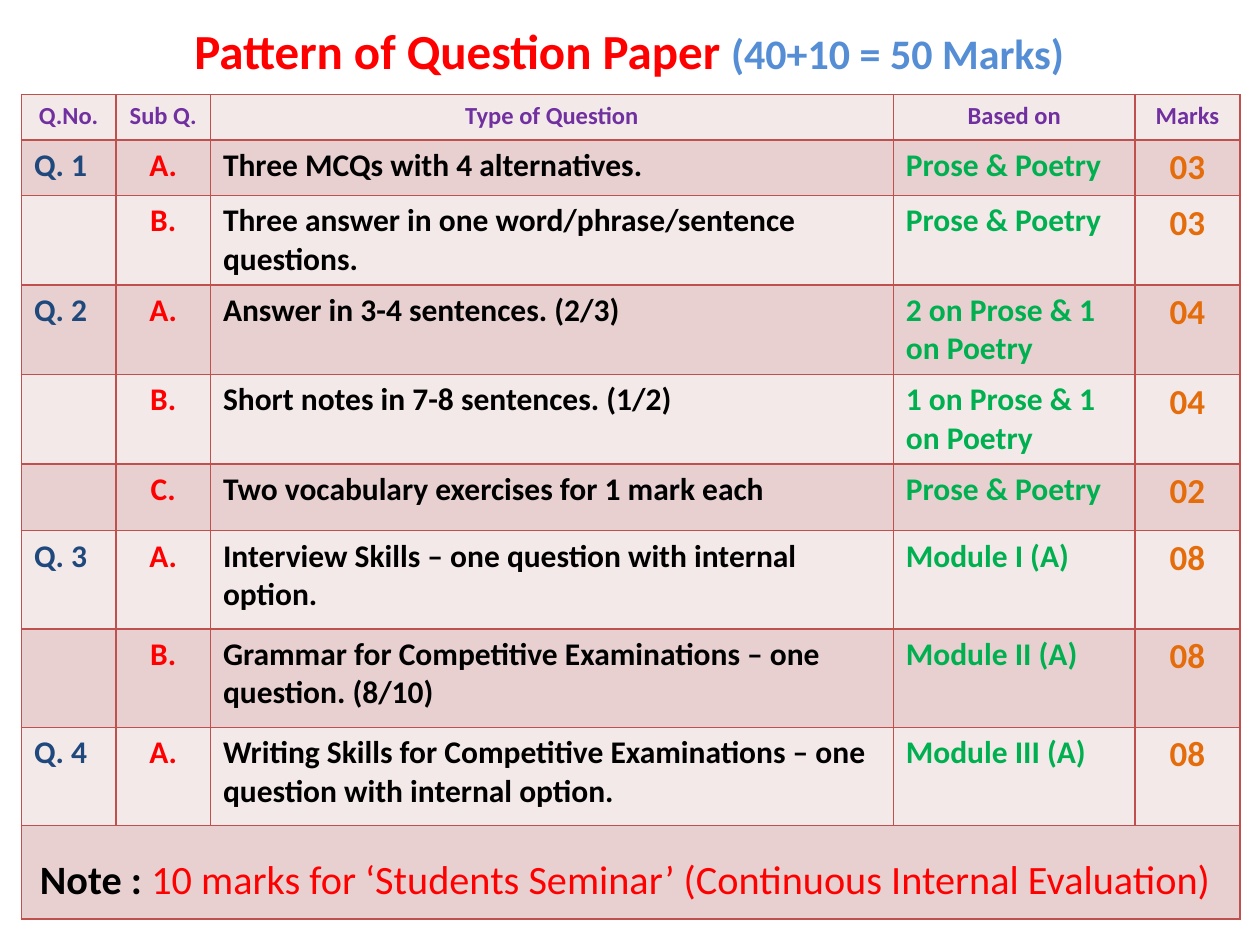
from dataclasses import dataclass

from lxml import etree
from pptx import Presentation
from pptx.dml.color import RGBColor
from pptx.enum.text import MSO_ANCHOR, MSO_AUTO_SIZE, PP_ALIGN
from pptx.oxml.ns import qn
from pptx.table import Table, _Cell
from pptx.text.text import _Paragraph
from pptx.util import Inches, Pt

CENTER = PP_ALIGN.CENTER
LEFT = PP_ALIGN.LEFT
TOP = MSO_ANCHOR.TOP
NO_AUTOFIT = MSO_AUTO_SIZE.NONE

RED = RGBColor(0xFF, 0x00, 0x00)
BLUE = RGBColor(0x55, 0x8E, 0xD5)
NAVY = RGBColor(0x1F, 0x49, 0x7D)
PURPLE = RGBColor(0x70, 0x30, 0xA0)
GREEN = RGBColor(0x00, 0xB0, 0x50)
ORANGE = RGBColor(0xE4, 0x6C, 0x0A)
BLACK = RGBColor(0x00, 0x00, 0x00)
LIGHT_BAND = RGBColor(0xF4, 0xE9, 0xE9)
DARK_BAND = RGBColor(0xE8, 0xD0, 0xD0)
BORDER = RGBColor(0xC0, 0x50, 0x4D)

FONT = "Calibri"


@dataclass(frozen=True)
class TextStyle:
    size: float
    color: RGBColor
    bold: bool = True


@dataclass(frozen=True)
class Column:
    heading: str
    width: float
    style: TextStyle
    alignment: PP_ALIGN


@dataclass(frozen=True)
class Question:
    number: str
    letter: str
    kind: str
    basis: str
    marks: str
    height: float

    def texts(self) -> tuple[str, ...]:
        return self.number, self.letter, self.kind, self.basis, self.marks


HEADING_STYLE = TextStyle(14, PURPLE)
HEADING_HEIGHT = 0.36
NOTE_HEIGHT = 0.74

COLUMNS = [
    Column("Q.No.", 0.75, TextStyle(18, NAVY), LEFT),
    Column("Sub Q.", 0.75, TextStyle(18, RED), CENTER),
    Column("Type of Question", 5.42, TextStyle(18, BLACK), LEFT),
    Column("Based on", 1.92, TextStyle(18, GREEN), LEFT),
    Column("Marks", 0.83, TextStyle(20, ORANGE), CENTER),
]

QUESTIONS = [
    Question("Q. 1", "A.", "Three MCQs with 4 alternatives.", "Prose & Poetry", "03", 0.44),
    Question("", "B.", "Three answer in one word/phrase/sentence questions.",
             "Prose & Poetry", "03", 0.71),
    Question("Q. 2", "A.", "Answer in 3-4 sentences. (2/3)",
             "2 on Prose & 1 on Poetry", "04", 0.71),
    Question("", "B.", "Short notes in 7-8 sentences. (1/2)",
             "1 on Prose & 1 on Poetry", "04", 0.71),
    Question("", "C.", "Two vocabulary exercises for 1 mark each", "Prose & Poetry", "02", 0.53),
    Question("Q. 3", "A.", "Interview Skills – one question with internal option.",
             "Module I (A)", "08", 0.78),
    Question("", "B.", "Grammar for Competitive Examinations – one question. (8/10)",
             "Module II (A)", "08", 0.78),
    Question("Q. 4", "A.",
             "Writing Skills for Competitive Examinations – one question with internal option.",
             "Module III (A)", "08", 0.78),
]

TITLE_RUNS = [
    ("Pattern of Question Paper ", TextStyle(28, RED)),
    ("(40+10 = 50 Marks)", TextStyle(24, BLUE)),
]
NOTE_RUNS = [
    ("Note : ", TextStyle(23, BLACK)),
    ("10 marks for ‘Students Seminar’ (Continuous Internal Evaluation) ",
     TextStyle(23, RED, False)),
]


def write_runs(
    paragraph: _Paragraph, styled_texts: list[tuple[str, TextStyle]], alignment: PP_ALIGN
) -> None:
    paragraph.alignment = alignment
    for text, style in styled_texts:
        run = paragraph.add_run()
        run.text = text
        run.font.name = FONT
        run.font.size = Pt(style.size)
        run.font.bold = style.bold
        run.font.color.rgb = style.color


def format_cell(cell: _Cell, fill: RGBColor) -> None:
    cell.fill.solid()
    cell.fill.fore_color.rgb = fill
    properties = cell._tc.get_or_add_tcPr()
    for index, side in enumerate(("lnL", "lnR", "lnT", "lnB")):
        line = etree.Element(qn(f"a:{side}"), w=str(Pt(1)))
        solid_fill = etree.SubElement(line, qn("a:solidFill"))
        etree.SubElement(solid_fill, qn("a:srgbClr"), val=str(BORDER))
        properties.insert(index, line)


def fill_table(table: Table) -> None:
    for column, column_style in zip(table.columns, COLUMNS):
        column.width = Inches(column_style.width)
    heights = [HEADING_HEIGHT, *(question.height for question in QUESTIONS), NOTE_HEIGHT]
    for row_index, (row, height) in enumerate(zip(table.rows, heights)):
        row.height = Inches(height)
        for cell in row.cells:
            format_cell(cell, DARK_BAND if row_index % 2 else LIGHT_BAND)

    for cell, column_style in zip(table.rows[0].cells, COLUMNS):
        paragraph = cell.text_frame.paragraphs[0]
        write_runs(paragraph, [(column_style.heading, HEADING_STYLE)], CENTER)
    for row_index, question in enumerate(QUESTIONS, start=1):
        for column_index, (text, column_style) in enumerate(zip(question.texts(), COLUMNS)):
            if text:
                paragraph = table.cell(row_index, column_index).text_frame.paragraphs[0]
                write_runs(paragraph, [(text, column_style.style)], column_style.alignment)

    note_row = len(heights) - 1
    note = table.cell(note_row, 0)
    note.merge(table.cell(note_row, len(COLUMNS) - 1))
    paragraph = note.text_frame.paragraphs[0]
    paragraph.line_spacing = 1.5
    write_runs(paragraph, NOTE_RUNS, CENTER)


def main() -> None:
    presentation = Presentation()
    presentation.slide_width = Inches(10)
    presentation.slide_height = Inches(7.5)
    slide = presentation.slides.add_slide(presentation.slide_layouts[5])

    title = slide.shapes.title
    title.left, title.top = Inches(0.08), Inches(0.11)
    title.width, title.height = Inches(9.83), Inches(0.6)
    title.text_frame.auto_size = NO_AUTOFIT
    title.text_frame.vertical_anchor = TOP
    write_runs(title.text_frame.paragraphs[0], TITLE_RUNS, CENTER)

    table_shape = slide.shapes.add_table(
        len(QUESTIONS) + 2, len(COLUMNS), Inches(0.17), Inches(0.75), Inches(9.67), Inches(6.54)
    )
    fill_table(table_shape.table)
    presentation.save("out.pptx")


if __name__ == "__main__":
    main()
